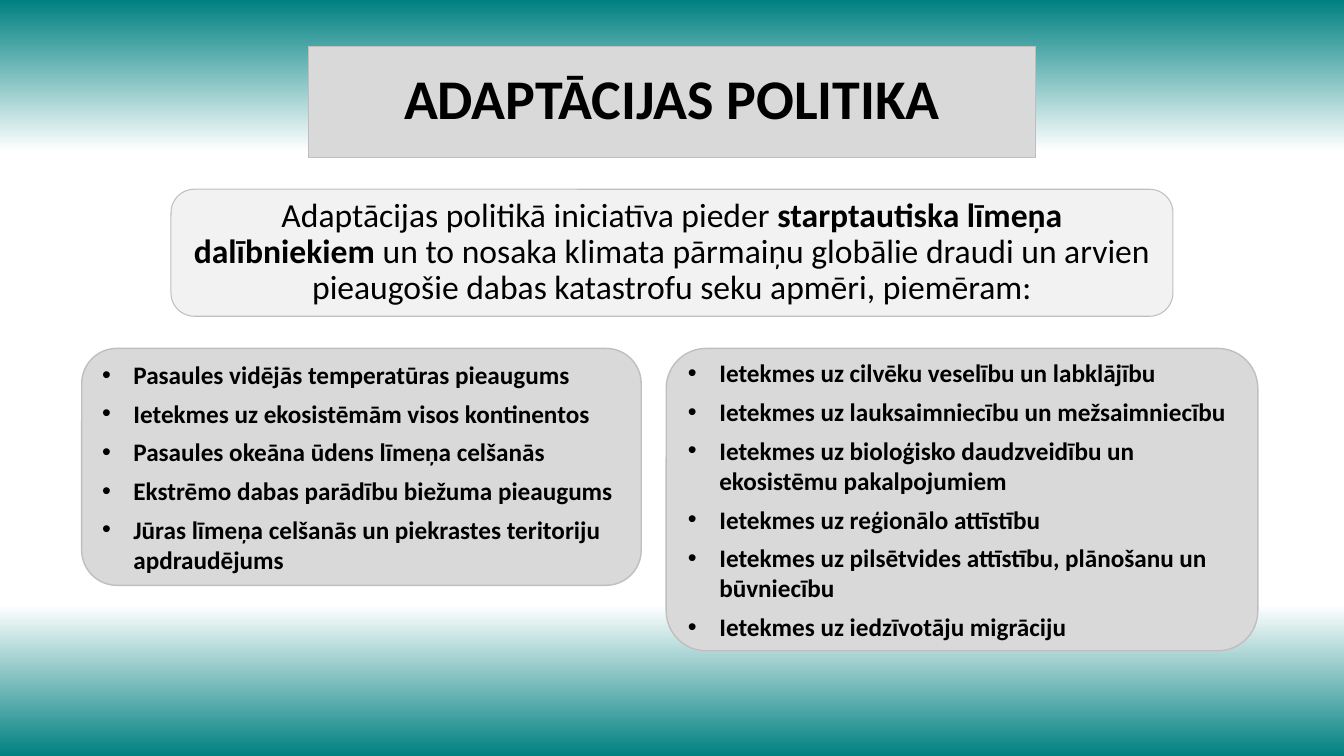
from dataclasses import dataclass

from lxml import etree
from pptx import Presentation
from pptx.dml.color import RGBColor
from pptx.enum.shapes import MSO_SHAPE
from pptx.enum.text import MSO_ANCHOR, MSO_AUTO_SIZE, PP_ALIGN
from pptx.oxml.ns import qn
from pptx.util import Cm, Pt

ROUNDED = MSO_SHAPE.ROUNDED_RECTANGLE
MIDDLE = MSO_ANCHOR.MIDDLE
NO_AUTOFIT = MSO_AUTO_SIZE.NONE
CENTER = PP_ALIGN.CENTER
LEFT = PP_ALIGN.LEFT


@dataclass(frozen=True)
class Theme:
    """Colours, fonts and type sizes of the slide."""

    teal: str = "008080"
    white: str = "FFFFFF"
    panel: str = "D9D9D9"
    pale: str = "F2F2F2"
    border: str = "BFBFBF"
    text: str = "000000"
    font: str = "Calibri"
    bullet_font: str = "Arial"
    title_size: int = 40
    statement_size: int = 24
    list_size: int = 18


THEME = Theme()
SLIDE_WIDTH, SLIDE_HEIGHT = 33.87, 19.05
ROW_GAP, COLUMN_GAP = 0.81, 0.63
BULLET_INDENT = 0.79
TITLE = "ADAPTĀCIJAS POLITIKA"
STATEMENT = [
    ("Adaptācijas politikā iniciatīva pieder ", False),
    ("starptautiska līmeņa dalībniekiem ", True),
    ("un to nosaka klimata pārmaiņu globālie draudi un arvien "
     "pieaugošie dabas katastrofu seku apmēri, piemēram:", False),
]
GLOBAL_THREATS = [
    "Pasaules vidējās temperatūras pieaugums",
    "Ietekmes uz ekosistēmām visos kontinentos",
    "Pasaules okeāna ūdens līmeņa celšanās",
    "Ekstrēmo dabas parādību biežuma pieaugums",
    "Jūras līmeņa celšanās un piekrastes teritoriju apdraudējums",
]
IMPACTS = [
    "Ietekmes uz cilvēku veselību un labklājību",
    "Ietekmes uz lauksaimniecību un mežsaimniecību",
    "Ietekmes uz bioloģisko daudzveidību un ekosistēmu pakalpojumiem",
    "Ietekmes uz reģionālo attīstību",
    "Ietekmes uz pilsētvides attīstību, plānošanu un būvniecību",
    "Ietekmes uz iedzīvotāju migrāciju",
]


def set_values(target, values):
    """Set each attribute of the target from a dict."""
    for name, value in values.items():
        setattr(target, name, value)


def paint_background(slide):
    """Fade the slide from teal edges to a white middle."""
    fill = slide.background.fill
    fill.gradient()
    fill.gradient_angle = 270
    stops = slide.element.find(".//" + qn("a:gsLst"))
    for stop in list(stops):
        stops.remove(stop)
    for percent, colour in ((0, THEME.teal), (20, THEME.white), (80, THEME.white), (100, THEME.teal)):
        stop = etree.SubElement(stops, qn("a:gs"), pos=str(percent * 1000))
        etree.SubElement(stop, qn("a:srgbClr"), val=colour)


def round_placeholder(placeholder, box, radius):
    """Place a placeholder in its box and round its corners."""
    set_values(placeholder, dict(zip(("left", "top", "width", "height"), map(Cm, box))))
    geometry = etree.Element(qn("a:prstGeom"), prst="roundRect")
    adjustments = etree.SubElement(geometry, qn("a:avLst"))
    etree.SubElement(adjustments, qn("a:gd"), name="adj", fmla=f"val {round(radius * 100000)}")
    placeholder.element.spPr.find(qn("a:xfrm")).addnext(geometry)


def style_panel(shape, fill_colour, line_width):
    """Give a panel its fill, border and text frame settings."""
    shape.shadow.inherit = False
    shape.fill.solid()
    shape.fill.fore_color.rgb = RGBColor.from_string(fill_colour)
    shape.line.color.rgb = RGBColor.from_string(THEME.border)
    shape.line.width = Pt(line_width)
    set_values(shape.text_frame, {
        "word_wrap": True, "auto_size": NO_AUTOFIT, "vertical_anchor": MIDDLE,
    })


def add_text(paragraph, parts, size, **values):
    """Write (text, bold) parts into a paragraph and format it."""
    set_values(paragraph, {"space_before": Pt(0), **values})
    for text, bold in parts:
        run = paragraph.add_run()
        run.text = text
        set_values(run.font, {"name": THEME.font, "size": Pt(size), "bold": bold})
        run.font.color.rgb = RGBColor.from_string(THEME.text)


def add_bullet(paragraph):
    """Give a paragraph a hanging round bullet."""
    properties = paragraph._p.get_or_add_pPr()
    properties.set("marL", str(Cm(BULLET_INDENT)))
    properties.set("indent", str(-Cm(BULLET_INDENT)))
    etree.SubElement(properties, qn("a:buFont"), typeface=THEME.bullet_font)
    etree.SubElement(properties, qn("a:buChar"), char="•")


def build_title(title, box):
    """Build the heading panel."""
    round_placeholder(title, box, 0.184)
    style_panel(title, THEME.panel, 0.75)
    add_text(title.text_frame.paragraphs[0], [(TITLE, True)], THEME.title_size,
             alignment=CENTER, line_spacing=0.9)


def build_statement(slide, box):
    """Build the introductory panel and return it."""
    statement = slide.shapes.add_shape(ROUNDED, *map(Cm, box))
    statement.adjustments[0] = 0.184
    style_panel(statement, THEME.pale, 0.75)
    add_text(statement.text_frame.paragraphs[0], STATEMENT, THEME.statement_size,
             alignment=CENTER, line_spacing=0.9)
    return statement


def build_list(body, box, radius, items):
    """Build a panel with a bulleted list."""
    round_placeholder(body, box, radius)
    style_panel(body, THEME.panel, 1)
    frame = body.text_frame
    for index, item in enumerate(items):
        paragraph = frame.add_paragraph() if index else frame.paragraphs[0]
        add_bullet(paragraph)
        add_text(paragraph, [(item, True)], THEME.list_size,
                 alignment=LEFT, line_spacing=1.0, space_after=Pt(6))


def centred_box(top, width, height):
    """Return a box centred across the slide."""
    return (SLIDE_WIDTH - width) / 2, top, width, height


def build_policy_slide(presentation):
    """Build the adaptation policy slide."""
    slide = presentation.slides.add_slide(presentation.slide_layouts[3])
    title, threats, impacts = list(slide.placeholders)[:3]
    for placeholder in list(slide.placeholders)[3:]:
        placeholder.element.getparent().remove(placeholder.element)
    paint_background(slide)

    title_box = centred_box(1.17, 18.31, 2.79)
    statement_box = centred_box(title_box[1] + title_box[3] + ROW_GAP, 25.25, 3.2)
    list_top = statement_box[1] + statement_box[3] + ROW_GAP
    threats_box = (2.06, list_top, 14.1, 5.97)
    impacts_box = (threats_box[0] + threats_box[2] + COLUMN_GAP, list_top, 14.91, 7.62)

    build_title(title, title_box)
    statement = build_statement(slide, statement_box)
    title.element.addnext(statement.element)
    build_list(threats, threats_box, 0.148, GLOBAL_THREATS)
    build_list(impacts, impacts_box, 0.132, IMPACTS)


def main():
    """Create and save the presentation."""
    presentation = Presentation()
    set_values(presentation, {"slide_width": Cm(SLIDE_WIDTH), "slide_height": Cm(SLIDE_HEIGHT)})
    build_policy_slide(presentation)
    presentation.save("out.pptx")


if __name__ == "__main__":
    main()
